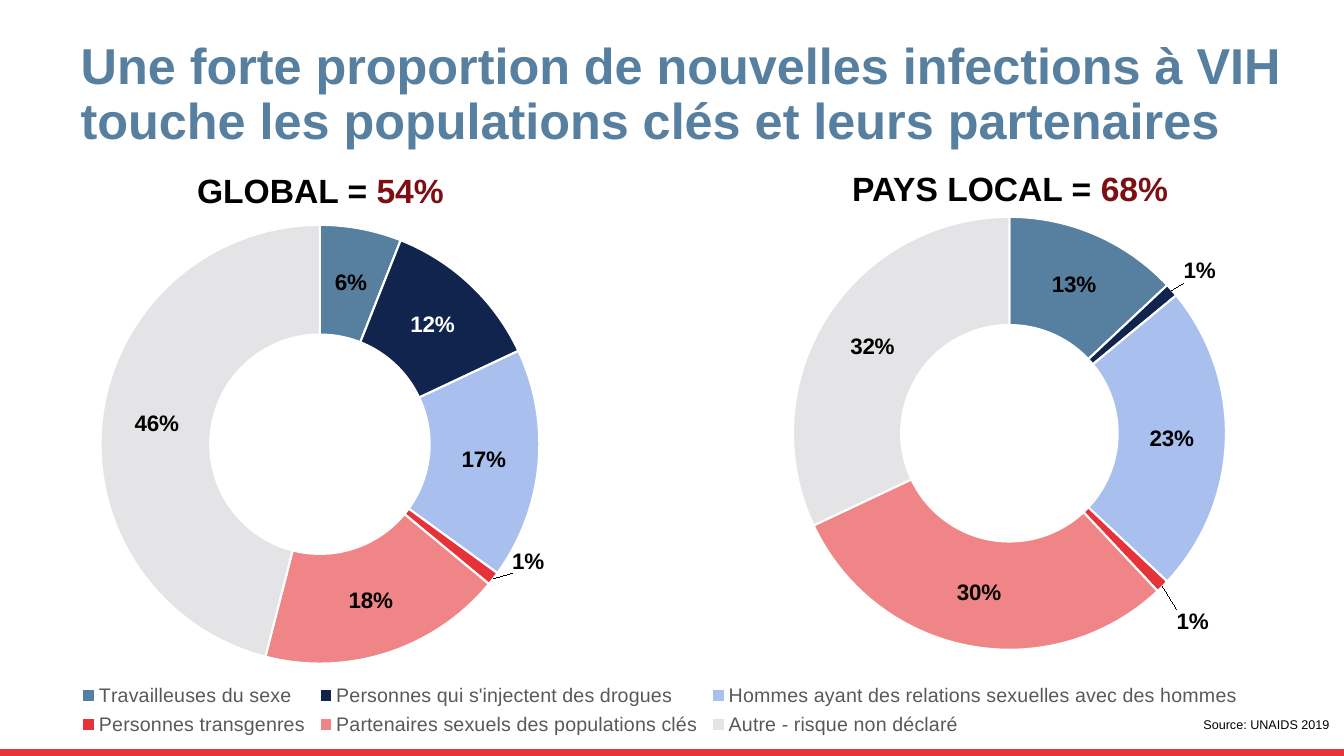
from lxml.etree import SubElement
from pptx import Presentation
from pptx.chart.data import CategoryChartData as ChartData
from pptx.dml.color import RGBColor
from pptx.enum.chart import XL_CHART_TYPE as ChartType, XL_LEGEND_POSITION as LegendPos
from pptx.enum.shapes import MSO_SHAPE as Shape
from pptx.enum.text import MSO_ANCHOR as Anchor, MSO_AUTO_SIZE as AutoSize, PP_ALIGN as Align
from pptx.oxml import parse_xml
from pptx.oxml.ns import nsdecls, qn
from pptx.util import Pt

BLUE = RGBColor(0x57, 0x7F, 0x9F)
NAVY = RGBColor(0x10, 0x24, 0x4D)
SKY = RGBColor(0xA9, 0xBF, 0xED)
RED = RGBColor(0xE6, 0x33, 0x39)
PINK = RGBColor(0xF0, 0x85, 0x88)
PALE = RGBColor(0xE4, 0xE4, 0xE6)
STRIPE = RGBColor(0xE7, 0x34, 0x39)
DARK_RED = RGBColor(0x7D, 0x0F, 0x13)
GREY = RGBColor(0x59, 0x59, 0x59)
BLACK = RGBColor(0, 0, 0)
WHITE = RGBColor(0xFF, 0xFF, 0xFF)

POPULATIONS = {
    "Travailleuses du sexe": BLUE,
    "Personnes qui s'injectent des drogues": NAVY,
    "Hommes ayant des relations sexuelles avec des hommes": SKY,
    "Personnes transgenres": RED,
    "Partenaires sexuels des populations clés": PINK,
    "Autre - risque non déclaré": PALE,
}


def place(parent, index, **settings):
    for old in parent.findall(qn("c:layout")):
        parent.remove(old)
    layout = parse_xml(f"<c:layout {nsdecls('c')}/>")
    manual = SubElement(layout, qn("c:manualLayout"))
    for tag, value in settings.items():
        SubElement(manual, qn(f"c:{tag}")).set("val", str(value))
    parent.insert(index, layout)


def frame(x, y, w, h):
    return dict(xMode="edge", yMode="edge", x=x, y=y, w=w, h=h)


class Deck:
    font = "Arial"

    def __init__(self):
        self.prs = Presentation()
        self.prs.slide_width, self.prs.slide_height = Pt(960), Pt(540)
        self.slide = self.prs.slides.add_slide(self.prs.slide_layouts[5])

    def style(self, font, size, color, bold=False):
        font.name, font.size, font.bold = self.font, Pt(size), bold
        font.color.rgb = color

    def title(self, text, *box):
        title = self.slide.shapes.title
        title.left, title.top, title.width, title.height = map(Pt, box)
        title.text_frame.text = text
        title.text_frame.auto_size = AutoSize.NONE
        title.text_frame.vertical_anchor = Anchor.MIDDLE
        paragraph = title.text_frame.paragraphs[0]
        paragraph.alignment, paragraph.line_spacing = Align.LEFT, 0.9
        self.style(paragraph.font, 36, BLUE, True)

    def text(self, text, size, *box, bold=False, accent=None, align=Align.LEFT, inset=7.2):
        area = self.slide.shapes.add_textbox(*map(Pt, box)).text_frame
        area.word_wrap = True
        area.margin_left = area.margin_right = Pt(inset)
        area.margin_top = area.margin_bottom = Pt(inset / 2)
        paragraph = area.paragraphs[0]
        paragraph.alignment = align
        self.style(paragraph.font, size, BLACK, bold)
        paragraph.add_run().text = text
        if accent:
            share = paragraph.add_run()
            share.text = accent
            share.font.color.rgb = DARK_RED

    def heading(self, region, share, *box):
        self.text(f"{region} = ", 24, *box, bold=True, accent=share, align=Align.CENTER)

    def doughnut(self, shares, ring, *box, offsets, legend=None, white_label=None):
        data = ChartData(number_format="0%")
        data.categories = list(POPULATIONS)
        data.add_series("Series 1", shares)
        chart = self.slide.shapes.add_chart(ChartType.DOUGHNUT, *map(Pt, box), data).chart
        self.style(chart.font, 10, BLACK)
        chart.has_title = False
        chart.has_legend = legend is not None
        if legend:
            chart.legend.position = LegendPos.BOTTOM
            chart.legend.include_in_layout = False
            self.style(chart.legend.font, 14, GREY)
            place(chart.element.find(f".//{qn('c:legend')}"), 1, **frame(*legend))
        place(chart.element.find(f".//{qn('c:plotArea')}"), 0, layoutTarget="inner", **frame(*ring))

        chart.plots[0].vary_by_categories = True
        series = chart.plots[0].series[0]
        labels = series.data_labels
        labels.show_value = True
        labels.number_format, labels.number_format_is_linked = "0%", False
        self.style(labels.font, 16, BLACK, True)
        for index, color in enumerate(POPULATIONS.values()):
            slice_format = series.points[index].format
            slice_format.fill.solid()
            slice_format.fill.fore_color.rgb = color
            slice_format.line.color.rgb = WHITE
            slice_format.line.width = Pt(1.5)
        if white_label is not None:
            self.style(series.points[white_label].data_label.font, 16, WHITE, True)
        for index, (dx, dy) in offsets.items():
            self.style(series.points[index].data_label.font, 16, BLACK, True)
            label = chart.element.xpath(f'.//c:dLbl[c:idx/@val="{index}"]')[0]
            place(label, 1, x=dx, y=dy)

    def bar(self, color, *box):
        bar = self.slide.shapes.add_shape(Shape.RECTANGLE, *map(Pt, box))
        bar.shadow.inherit = False
        bar.fill.solid()
        bar.fill.fore_color.rgb = color
        bar.line.fill.background()


def main():
    deck = Deck()
    deck.title("Une forte proportion de nouvelles infections à VIH touche "
               "les populations clés et leurs partenaires", 50.4, 36.7, 885, 63.4)
    deck.doughnut((0.06, 0.12, 0.17, 0.01, 0.18, 0.46), (0.088, 0.023, 0.337, 0.83),
                  -10, 148.3, 930, 386, offsets={3: (0.06, 0.03)},
                  legend=(0.068, 0.87, 0.9, 0.12), white_label=1)
    deck.doughnut((0.13, 0.01, 0.23, 0.01, 0.3, 0.32), (0.465, 0.116, 0.506, 0.71),
                  282.2, 104.4, 611.3, 435.6, offsets={1: (0.08, -0.09), 3: (0.08, 0.12)})
    deck.heading("GLOBAL", "54%", 127.4, 118, 203, 36)
    deck.heading("PAYS LOCAL", "68%", 564.5, 116.6, 314, 36)
    deck.text("Source: UNAIDS 2019", 9, 854.6, 509.8, 105.4, 16.6, inset=5)
    deck.bar(STRIPE, 0, 535, 960, 5.8)
    deck.prs.save("out.pptx")


if __name__ == "__main__":
    main()
